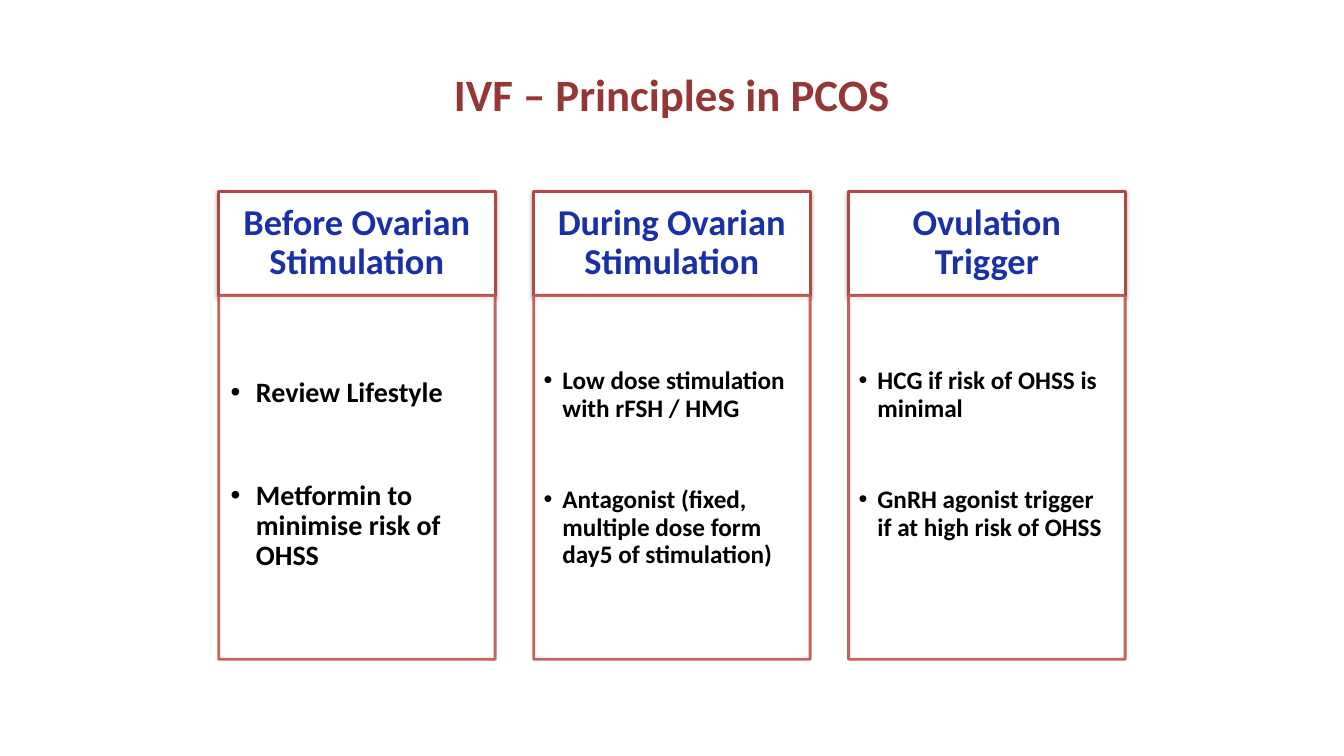
import pptx
import pptx.util
from lxml import etree
from pptx.dml.color import RGBColor
from pptx.enum.shapes import MSO_SHAPE
from pptx.enum.text import MSO_ANCHOR, PP_ALIGN
from pptx.oxml.ns import qn

Pt = pptx.util.Pt

COLORS = {
    "title": "953735",
    "heading": "1930A7",
    "text": "000000",
    "white": "FFFFFF",
    "heading_line": "AE4946",
    "body_line": "C0504D",
}

# Column grid
LEFT, STEP, WIDTH = 156.2, 225, 197.5
HEAD_TOP, HEAD_H = 136.8, 74.2
BODY_H = 260

# Body formats: text size, hanging indent, insets and paragraph gap
LARGE = dict(size=20, indent=18, insets=(8.6, 59, 11.5, 12), gap=52)
SMALL = dict(size=18, indent=13.5, insets=(7.2, 52, 10, 11), gap=46)

COLUMNS = [
    ("Before Ovarian Stimulation", LARGE,
     ["Review Lifestyle", "Metformin to minimise risk of OHSS"]),
    ("During Ovarian Stimulation", SMALL,
     ["Low dose stimulation with rFSH / HMG",
      "Antagonist (fixed, multiple dose form day5 of stimulation)"]),
    ("Ovulation Trigger", SMALL,
     ["HCG if risk of OHSS is minimal",
      "GnRH agonist trigger if at high risk of OHSS"]),
]


def rgb(name):
    return RGBColor.from_string(COLORS[name])


def add_text(p, text, size, color, align=PP_ALIGN.LEFT, spacing=0.9, before=0):
    p.alignment = align
    p.line_spacing = spacing
    p.space_before = Pt(before)
    r = p.add_run()
    r.text = text
    r.font.name = "Calibri"
    r.font.size = Pt(size)
    r.font.bold = True
    r.font.color.rgb = rgb(color)


def add_bullet(p, indent):
    pPr = p._p.get_or_add_pPr()
    pPr.set("marL", str(Pt(indent)))
    pPr.set("indent", str(-Pt(indent)))
    etree.SubElement(pPr, qn("a:buFont"), typeface="Arial")
    etree.SubElement(pPr, qn("a:buChar"), char="•")


def set_alpha(parent, percent):
    for clr in parent.iter(qn("a:srgbClr")):
        etree.SubElement(clr, qn("a:alpha"), val=str(percent * 1000))


def add_shadow(sp):
    effects = sp._element.spPr.find(qn("a:effectLst"))
    shadow = etree.SubElement(effects, qn("a:outerShdw"), blurRad=str(Pt(3.1)),
                              dist=str(Pt(1.6)), dir="5400000", rotWithShape="0")
    etree.SubElement(shadow, qn("a:srgbClr"), val="000000")
    set_alpha(shadow, 38)


def add_box(s, left, top, height, line, insets, anchor):
    sp = s.shapes.add_shape(MSO_SHAPE.RECTANGLE, Pt(left), Pt(top), Pt(WIDTH), Pt(height))
    sp.shadow.inherit = False
    sp.fill.solid()
    sp.fill.fore_color.rgb = rgb("white")
    sp.line.color.rgb = rgb(line)
    sp.line.width = Pt(2)
    tf = sp.text_frame
    tf.word_wrap = True
    tf.vertical_anchor = anchor
    tf.margin_left, tf.margin_top, tf.margin_right, tf.margin_bottom = map(Pt, insets)
    return sp


def add_heading(s, left, text):
    sp = add_box(s, left, HEAD_TOP, HEAD_H, "heading_line",
                 (14.4, 8.6, 14.4, 8.6), MSO_ANCHOR.MIDDLE)
    add_shadow(sp)
    add_text(sp.text_frame.paragraphs[0], text, 26, "heading", PP_ALIGN.CENTER)


def add_body(s, left, items, size, indent, insets, gap):
    sp = add_box(s, left, HEAD_TOP + HEAD_H, BODY_H, "body_line", insets, MSO_ANCHOR.TOP)
    set_alpha(sp._element.spPr, 90)
    tf = sp.text_frame
    for i, item in enumerate(items):
        p = tf.add_paragraph() if i else tf.paragraphs[0]
        add_bullet(p, indent)
        add_text(p, item, size, "text", before=gap if i else 0)


def add_title(s, text):
    title = s.shapes.title
    title.left, title.top, title.width, title.height = map(Pt, (120, 21.6, 720, 90))
    title.text_frame.vertical_anchor = MSO_ANCHOR.MIDDLE
    add_text(title.text_frame.paragraphs[0], text, 32, "title", PP_ALIGN.CENTER, 1.0)


def main():
    prs = pptx.Presentation()
    prs.slide_width, prs.slide_height = Pt(960), Pt(540)
    s = prs.slides.add_slide(prs.slide_layouts[5])
    add_title(s, "IVF – Principles in PCOS")

    # Three columns, each a heading above its list
    for i, (heading, style, items) in enumerate(COLUMNS):
        left = LEFT + i * STEP
        add_heading(s, left, heading)
        add_body(s, left, items, **style)

    prs.save("out.pptx")


if __name__ == "__main__":
    main()
